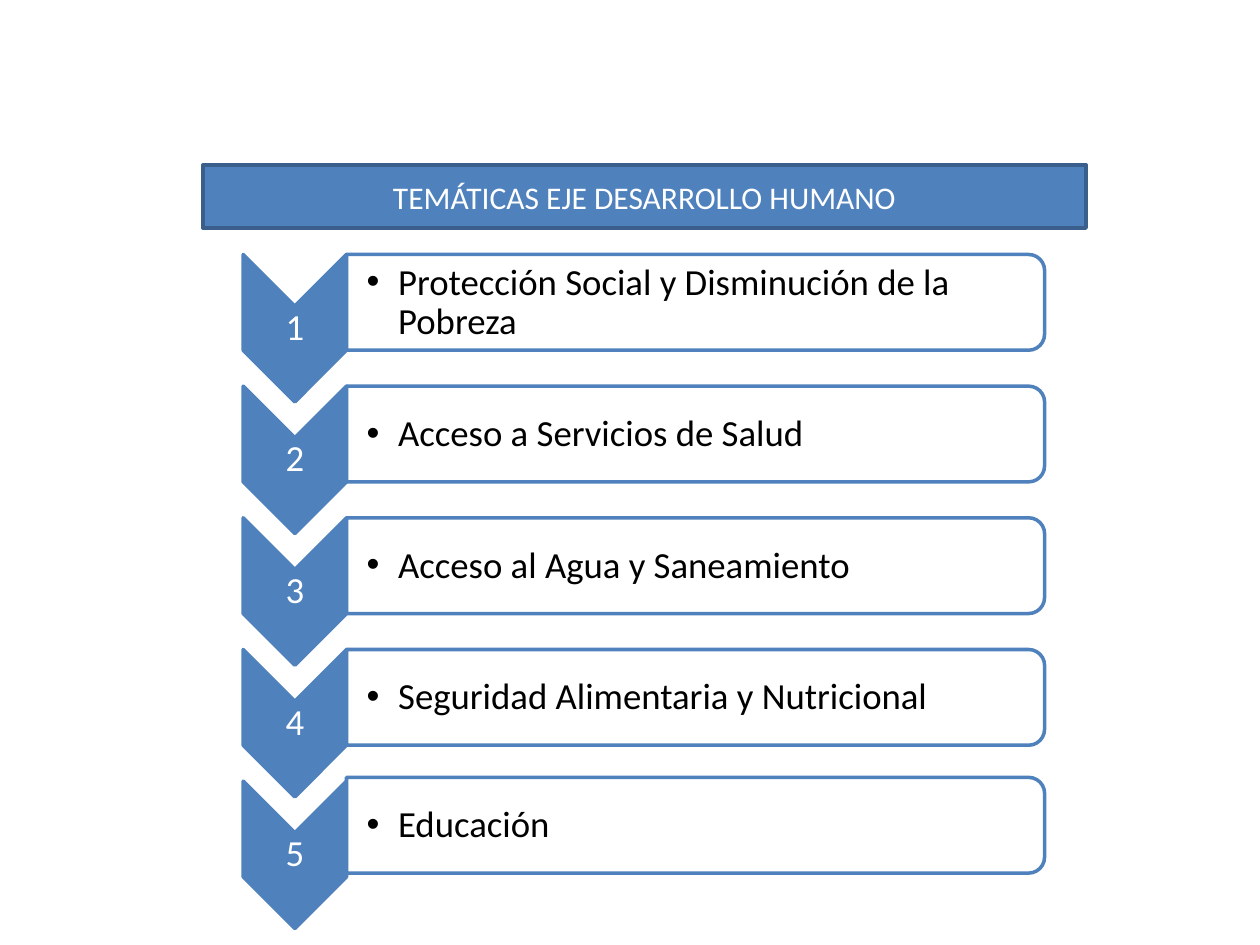
import dataclasses

import pptx
import pptx.dml.color
import pptx.enum.shapes
import pptx.enum.text
import pptx.oxml.ns
import pptx.util
from lxml import etree

Inches = pptx.util.Inches
Pt = pptx.util.Pt
RGB = pptx.dml.color.RGBColor.from_string
SHAPE = pptx.enum.shapes.MSO_SHAPE
ALIGN = pptx.enum.text.PP_ALIGN
qn = pptx.oxml.ns.qn


@dataclasses.dataclass(frozen=True)
class Theme:
    """Colours, font and type sizes of the slide."""
    blue: str = "4F81BD"
    edge: str = "3A5F8C"
    white: str = "FFFFFF"
    black: str = "000000"
    font: str = "Calibri"
    title_size: int = 18
    item_size: int = 21
    line_width: int = 2


THEME = Theme()
TITLE = "TEMÁTICAS EJE DESARROLLO HUMANO"
TOPICS = [
    "Protección Social y Disminución de la Pobreza",
    "Acceso a Servicios de Salud",
    "Acceso al Agua y Saneamiento",
    "Seguridad Alimentaria y Nutricional",
    "Educación",
]


def paint(sp, fill, line):
    """Give a shape a solid fill and an outline."""
    sp.fill.solid()
    sp.fill.fore_color.rgb = RGB(fill)
    sp.line.color.rgb = RGB(line)
    sp.line.width = Pt(THEME.line_width)


def add_run(p, text, size, color):
    """Add one run of text to a paragraph."""
    r = p.add_run()
    r.text = text
    r.font.name = THEME.font
    r.font.size = Pt(size)
    r.font.bold = False
    r.font.color.rgb = RGB(color)


def add_turned(shapes, kind, x, y, w, h, fill):
    """Add a shape turned a quarter clockwise so that it covers the given box."""
    sp = shapes.add_shape(kind, Inches(x + (w - h) / 2), Inches(y + (h - w) / 2),
                          Inches(h), Inches(w))
    sp.rotation = 90
    sp.shadow.inherit = False
    paint(sp, fill, THEME.blue)
    return sp


def add_label(shapes, x, y, w, h, left_inset):
    """Add a text box centred vertically and return its paragraph."""
    tf = shapes.add_textbox(Inches(x), Inches(y), Inches(w), Inches(h)).text_frame
    tf.word_wrap = True
    tf.vertical_anchor = pptx.enum.text.MSO_ANCHOR.MIDDLE
    tf.margin_left = Inches(left_inset)
    tf.margin_right = tf.margin_top = tf.margin_bottom = Inches(0.01)
    p = tf.paragraphs[0]
    p.line_spacing = 0.9
    return p


def add_bullet(p, indent):
    """Give a paragraph a hanging round bullet."""
    pPr = p._p.get_or_add_pPr()
    pPr.set("marL", str(Inches(indent)))
    pPr.set("indent", str(-Inches(indent)))
    etree.SubElement(pPr, qn("a:buFont")).set("typeface", "Arial")
    etree.SubElement(pPr, qn("a:buChar")).set("char", "•")


def add_banner(s, x, y, w, h):
    """Place the title as a rounded banner."""
    sp = s.shapes.title
    sp.left, sp.top, sp.width, sp.height = map(Inches, (x, y, w, h))
    geom = etree.SubElement(sp._element.spPr, qn("a:prstGeom"), prst="roundRect")
    etree.SubElement(geom, qn("a:avLst"))
    paint(sp, THEME.blue, THEME.edge)
    tf = sp.text_frame
    tf.word_wrap = True
    tf.auto_size = pptx.enum.text.MSO_AUTO_SIZE.NONE
    tf.vertical_anchor = pptx.enum.text.MSO_ANCHOR.MIDDLE
    p = tf.paragraphs[0]
    p.alignment = ALIGN.CENTER
    add_run(p, TITLE, THEME.title_size, THEME.white)


def add_step(shapes, number, topic, x, y, w, lift):
    """Add a numbered chevron and its topic bar, raised by lift."""
    chevron_w, chevron_h, bar_h = 0.82, 1.17, 0.76
    add_turned(shapes, SHAPE.CHEVRON, x, y, chevron_w, chevron_h, THEME.blue)
    p = add_label(shapes, x, y + 0.41, chevron_w, 0.35, 0.01)
    p.alignment = ALIGN.CENTER
    add_run(p, str(number), THEME.item_size, THEME.white)

    bar_x, bar_y, bar_w = x + chevron_w, y - lift, w - chevron_w
    bar = add_turned(shapes, SHAPE.ROUND_2_SAME_RECTANGLE, bar_x, bar_y, bar_w, bar_h,
                     THEME.white)
    color = bar._element.spPr.find(qn("a:solidFill"))[0]
    etree.SubElement(color, qn("a:alpha")).set("val", "90000")
    p = add_label(shapes, bar_x, bar_y + 0.04, bar_w - 0.03, 0.69, 0.16)
    p.level = 1
    add_bullet(p, 0.25)
    add_run(p, topic, THEME.item_size, THEME.black)


def add_steps(s, x, y, w, h):
    """Spread the topics evenly down the box as one group."""
    shapes = s.shapes.add_group_shape().shapes
    pitch = (h - 1.17) / (len(TOPICS) - 1)
    for i, topic in enumerate(TOPICS):
        lift = 0.03 if i == len(TOPICS) - 1 else 0
        add_step(shapes, i + 1, topic, x, y + i * pitch, w, lift)


def main():
    """Build and save the slide."""
    prs = pptx.Presentation()
    prs.slide_width, prs.slide_height = Inches(10), Inches(7.5)
    s = prs.slides.add_slide(prs.slide_layouts[5])
    add_banner(s, 1.61, 1.31, 7.01, 0.5)
    add_steps(s, 1.93, 2.02, 6.36, 5.35)
    prs.save("out.pptx")


if __name__ == "__main__":
    main()
